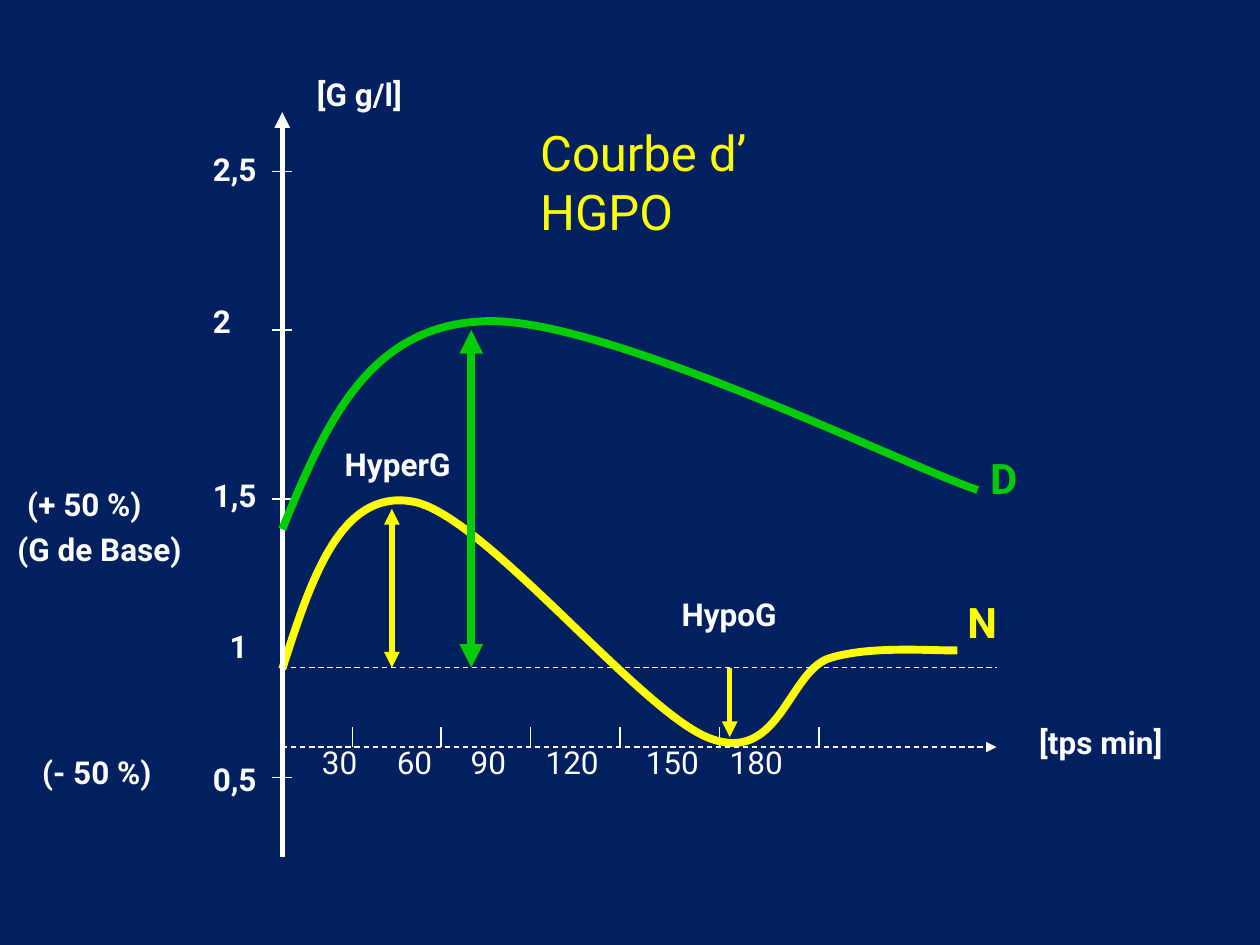
import pptx
import pptx.dml.color
import pptx.enum.dml
import pptx.enum.shapes
import pptx.oxml
import pptx.oxml.ns
import pptx.util
from lxml import etree

NAVY, WHITE, YELLOW, GREEN = "002060", "FFFFFF", "FFFF00", "00CC00"
AXIS_X, PLOT_RIGHT, BASE_Y, TIME_Y = 5.69, 20.09, 13.46, 15.06
Cm = pptx.util.Cm


def color(value):
    return pptx.dml.color.RGBColor.from_string(value)


def add_element(parent, tag, **attributes):
    element = etree.SubElement(parent, pptx.oxml.ns.qn(tag))
    for name, value in attributes.items():
        element.set(name, str(value))
    return element


def write(para, text, size=18, ink=WHITE, bold=True, before=0, indent=0, tabs=()):
    properties = para._p.get_or_add_pPr()
    if indent:
        properties.set("marL", str(Cm(indent)))
    if tabs:
        tab_list = add_element(properties, "a:tabLst")
        for stop in tabs:
            add_element(tab_list, "a:tab", pos=Cm(stop), algn="l")
    if before:
        para.space_before = pptx.util.Pt(before)
    para.text = text
    para.font.name = "Roboto"
    para.font.size = pptx.util.Pt(size)
    para.font.bold = bold
    para.font.color.rgb = color(ink)


def bend(shape):
    """Turn each three straight segments of a freeform into one cubic curve."""
    outline = next(shape._element.iter(pptx.oxml.ns.qn("a:path")))
    segments = outline.findall(pptx.oxml.ns.qn("a:lnTo"))
    for index in range(0, len(segments), 3):
        cubic = add_element(outline, "a:cubicBezTo")
        for segment in segments[index:index + 3]:
            cubic.append(segment[0])
            outline.remove(segment)


class Chalkboard:
    """Draws lines, curves and labels on the current slide in one style."""

    def __init__(self, page):
        self.page = page
        page.background.fill.solid()
        page.background.fill.fore_color.rgb = color(NAVY)

    def line(self, x1, y1, x2, y2, ink=WHITE, width=0.75, head=False, tail=False, dash=False):
        connector = self.page.shapes.add_connector(
            pptx.enum.shapes.MSO_CONNECTOR.STRAIGHT, Cm(x1), Cm(y1), Cm(x2), Cm(y2))
        connector.line.color.rgb = color(ink)
        connector.line.width = pptx.util.Pt(width)
        if dash:
            connector.line.dash_style = pptx.enum.dml.MSO_LINE.DASH
        outline = connector.line._get_or_add_ln()
        if head:
            add_element(outline, "a:headEnd", type="triangle")
        if tail:
            add_element(outline, "a:tailEnd", type="triangle")
        add_element(connector._element.spPr, "a:effectLst")

    def curve(self, ink, *points):
        start, *controls = [(Cm(x), Cm(y)) for x, y in points]
        builder = self.page.shapes.build_freeform(*start)
        builder.add_line_segments(controls, close=False)
        shape = builder.convert_to_shape()
        bend(shape)
        shape.shadow.inherit = False
        shape.fill.background()
        shape.line.color.rgb = color(ink)
        shape.line.width = pptx.util.Pt(4.5)

    def label(self, left, top, width, height, *lines, **style):
        box = self.page.shapes.add_textbox(Cm(left), Cm(top), Cm(width), Cm(height))
        frame = box.text_frame
        frame.word_wrap = True
        for index, (text, extra) in enumerate(lines):
            para = frame.add_paragraph() if index else frame.paragraphs[0]
            write(para, text, **style, **extra)


def main():
    deck = pptx.Presentation()
    deck.slide_width, deck.slide_height = Cm(25.4), Cm(19.05)
    board = Chalkboard(deck.slides.add_slide(deck.slide_layouts[6]))

    for x in (7.11, 8.89, 10.69, 12.5, 14.5, 16.51):
        board.line(x, TIME_Y - 0.4, x, TIME_Y)
    board.curve(YELLOW, (AXIS_X, 13.49),
                (6.27, 11.68), (6.86, 9.86), (8.31, 10.11),
                (9.73, 10.34), (12.9, 14.35), (14.3, 14.88),
                (15.7, 15.42), (15.88, 13.59), (16.69, 13.28),
                (17.53, 13), (18.87, 13.13), (19.3, 13.11))
    board.line(AXIS_X, 2.26, AXIS_X, 17.27, width=3, head=True)
    for y in (3.46, 6.65, 10.06, 15.67):
        board.line(AXIS_X - 0.2, y, AXIS_X + 0.2, y)

    board.label(4.04, 2.9, 1.52, 13.31,
                ("2,5", {}),
                ("2", {"before": 65}),
                ("1,5", {"before": 78}),
                ("1", {"before": 65, "indent": 0.34}),
                ("0,5", {"before": 54}))
    for text, left, top, width in (
            ("[G g/l]", 6.14, 1.38, 2.69),
            ("[tps min]", 20.7, 14.46, 3.45)):
        board.label(left, top, width, 1.02, (text, {}))
    board.curve(GREEN, (AXIS_X, 10.67),
                (6.53, 8.64), (7.37, 6.6), (9.7, 6.48),
                (12.04, 6.32), (18.03, 9.3), (19.71, 9.88))
    board.line(7.9, 10.26, 7.9, BASE_Y, YELLOW, 3, head=True, tail=True)
    board.line(14.71, BASE_Y, 14.71, 14.86, YELLOW, 3, tail=True)
    board.label(5.31, 14.86, 12.47, 1.02,
                ("\t30\t60\t90\t120\t150\t180", {}),
                bold=False, tabs=(0.93, 2.44, 3.93, 5.44, 7.46, 9.15))
    for text, left, top, width in (
            ("(+ 50 %)", 0.3, 9.65, 3.56),
            ("(- 50 %)", 0.6, 15.06, 3.3),
            ("HyperG", 6.7, 8.84, 2.9),
            ("HypoG", 13.49, 11.87, 2.62)):
        board.label(left, top, width, 1.02, (text, {}))
    board.label(19.71, 8.99, 1.2, 1.27, ("D", {}), size=24, ink=GREEN)
    board.label(19.25, 11.91, 1.25, 1.27, ("N", {}), size=24, ink=YELLOW)
    board.line(9.5, 6.65, 9.5, BASE_Y, GREEN, 4.5, head=True, tail=True)
    board.label(10.64, 2.35, 7.2, 1.45, ("Courbe d’ HGPO", {}),
                size=28, ink=YELLOW, bold=False)
    board.label(0.1, 10.57, 4.22, 1.02, ("(G de Base)", {}))
    board.line(AXIS_X, TIME_Y, PLOT_RIGHT, TIME_Y, tail=True, dash=True)
    board.line(AXIS_X, BASE_Y, PLOT_RIGHT, BASE_Y, dash=True)
    deck.save("out.pptx")


if __name__ == "__main__":
    main()
